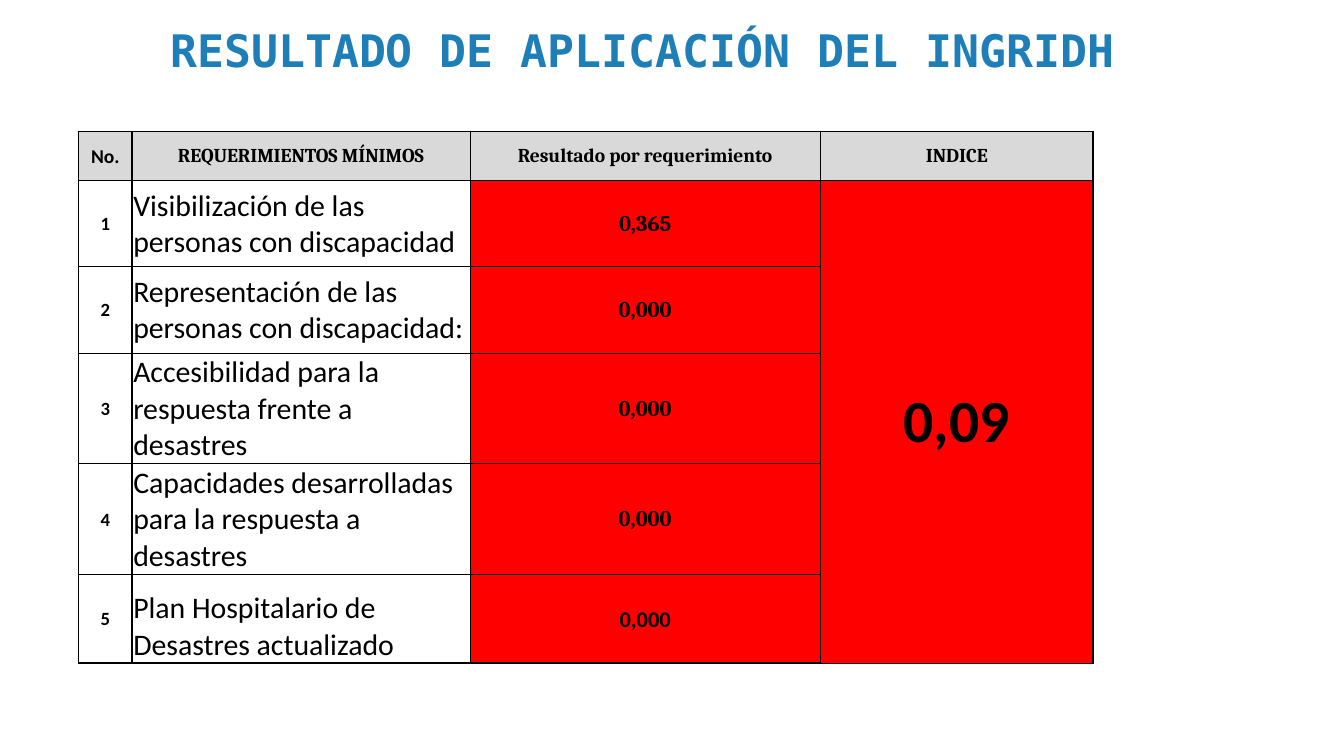
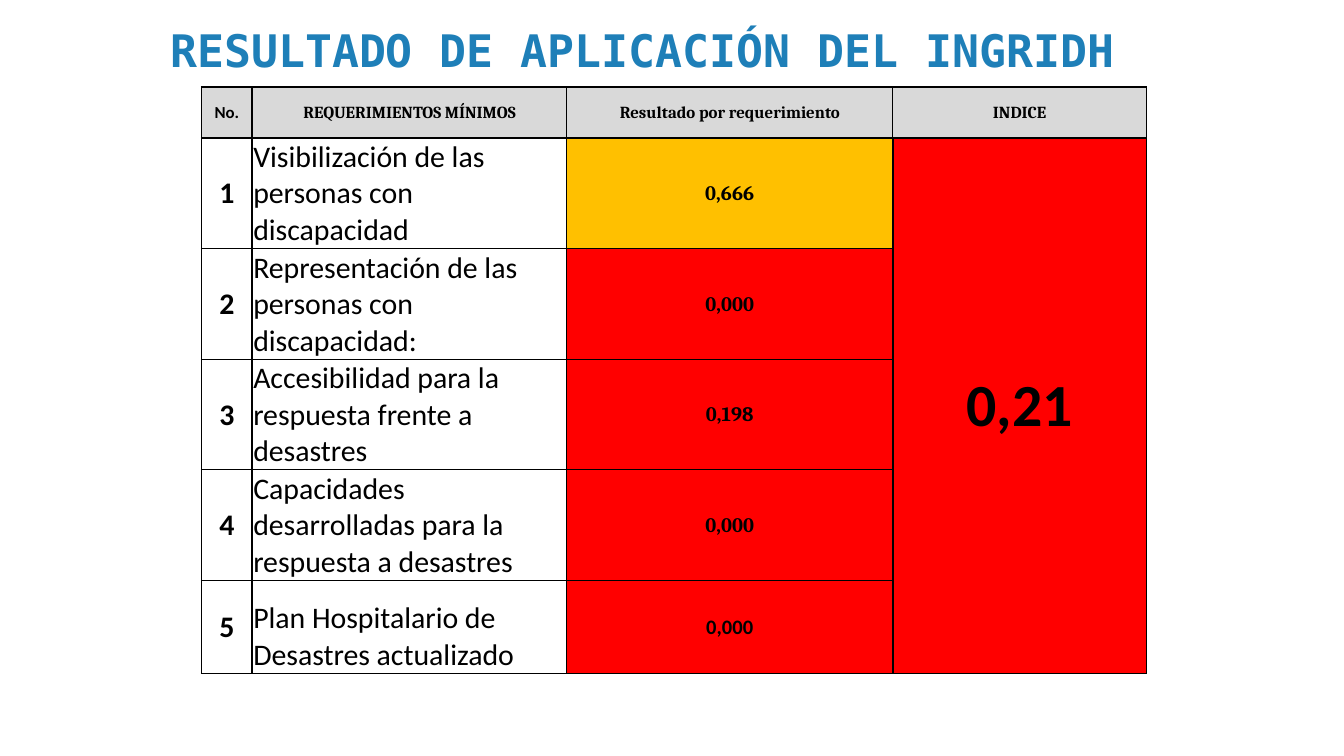
from lxml.etree import SubElement
from pptx import Presentation
from pptx.dml.color import RGBColor
from pptx.enum.text import MSO_ANCHOR as Anchor, PP_ALIGN as Align
from pptx.oxml.ns import qn
from pptx.util import Pt

COLORS = {
    "title": "1E7FB8",
    "text": "000000",
    "border": "000000",
    "header": "D9D9D9",
    "low": "FF0000",
    "medium": "FFC000",
}
TITLE = "RESULTADO DE APLICACIÓN DEL INGRIDH"
HEADINGS = ["No.", "REQUERIMIENTOS MÍNIMOS", "Resultado por requerimiento", "INDICE"]
REQUIREMENTS = [
    "Visibilización de las personas con discapacidad",
    "Representación de las personas con discapacidad:",
    "Accesibilidad para la respuesta frente a desastres",
    "Capacidades desarrolladas para la respuesta a desastres",
    "Plan Hospitalario de Desastres actualizado",
]
LAST = len(REQUIREMENTS)
INDEX_COL = len(HEADINGS) - 1
THICK, THIN = 1, 0.5

RESULTS = [
    dict(
        at=(42, 70.4), cols=[28.8, 181, 187.7, 146.2],
        rows=[26.2] + [46.3] * 4 + [47.5],
        values=["0,365", "0,000", "0,000", "0,000", "0,000"], index="0,09",
        heading_size=10.5, number_size=10, value_size=12,
    ),
    dict(
        at=(108, 46.6), cols=[27.1, 168.5, 174.7, 135.9],
        rows=[27.2] + [48.3] * 4 + [49.8],
        values=["0,666", "0,000", "0,198", "0,000", "0,000"], index="0,21",
        heading_size=9, number_size=16, value_size=11,
    ),
]


def level(value):
    return "medium" if float(value.replace(",", ".")) >= 0.5 else "low"


class ResultDeck:
    def __init__(self):
        self.prs = Presentation()
        self.prs.slide_width, self.prs.slide_height = Pt(720), Pt(405)
        self.slide = None

    def add_slide(self):
        self.slide = self.prs.slides.add_slide(self.prs.slide_layouts[5])

    def style(self, paragraph, size, font="Calibri", bold=True, color="text", align=Align.CENTER):
        paragraph.alignment = align
        paragraph.font.size = Pt(size)
        paragraph.font.name = font
        paragraph.font.bold = bold
        paragraph.font.color.rgb = RGBColor.from_string(COLORS[color])

    def title(self, text):
        heading = self.slide.shapes.title
        heading.left, heading.top, heading.width, heading.height = Pt(75.6), Pt(-7.2), Pt(537), Pt(67.7)
        frame = heading.text_frame
        frame.text = text
        frame.word_wrap = True
        frame.vertical_anchor = Anchor.MIDDLE
        self.style(frame.paragraphs[0], 24, "DejaVu Sans Mono", color="title")

    def borders(self, cell, row, col):
        widths = {
            "L": THIN if col == 2 or (row == 0 and col == INDEX_COL) else THICK,
            "R": THIN if col == 1 or (col == 2 and row != 1) else THICK,
            "T": THICK if row <= 1 else THIN,
            "B": THICK if row in (0, LAST) and (row == 0 or col != INDEX_COL) else THIN,
        }
        if col == INDEX_COL and row > 1:
            del widths["T"]
        if col == INDEX_COL and 1 < row < LAST:
            del widths["B"]
        props = cell._tc.get_or_add_tcPr()
        for side, width in widths.items():
            line = SubElement(props, qn(f"a:ln{side}"), w=str(Pt(width)))
            fill = SubElement(line, qn("a:solidFill"))
            SubElement(fill, qn("a:srgbClr"), val=COLORS["border"])

    def cell(self, cell, text, size, fill=None, anchor=Anchor.MIDDLE, **style):
        cell.margin_left = cell.margin_right = cell.margin_top = Pt(0.6)
        cell.margin_bottom = 0
        cell.vertical_anchor = anchor
        cell.text = text
        self.style(cell.text_frame.paragraphs[0], size, **style)
        if fill:
            cell.fill.solid()
            cell.fill.fore_color.rgb = RGBColor.from_string(COLORS[fill])
        else:
            cell.fill.background()

    def result_table(self, at, cols, rows, values, index, heading_size, number_size, value_size):
        table = self.slide.shapes.add_table(
            len(rows), len(cols), Pt(at[0]), Pt(at[1]), Pt(sum(cols)), Pt(sum(rows))
        ).table
        table.first_row = table.horz_banding = False
        for column, width in zip(table.columns, cols):
            column.width = Pt(width)
        for table_row, height in zip(table.rows, rows):
            table_row.height = Pt(height)
        for row in range(len(rows)):
            for col in range(len(cols)):
                self.borders(table.cell(row, col), row, col)
        for col, heading in enumerate(HEADINGS):
            self.cell(table.cell(0, col), heading, heading_size, "header",
                      font="Cambria" if col else "Calibri")
        for row, (requirement, value) in enumerate(zip(REQUIREMENTS, values), 1):
            final = row == LAST
            self.cell(table.cell(row, 0), str(row), number_size)
            self.cell(table.cell(row, 1), requirement, 16, bold=False, align=Align.LEFT,
                      anchor=Anchor.BOTTOM if final else Anchor.MIDDLE)
            self.cell(table.cell(row, 2), value, value_size, level(value),
                      font="Calibri" if final else "Cambria")
        index_cell = table.cell(1, INDEX_COL)
        index_cell.merge(table.cell(LAST, INDEX_COL))
        self.cell(index_cell, index, 32, level(index))


def main():
    deck = ResultDeck()
    for result in RESULTS:
        deck.add_slide()
        deck.title(TITLE)
        deck.result_table(**result)
    deck.prs.save("out.pptx")


if __name__ == "__main__":
    main()
